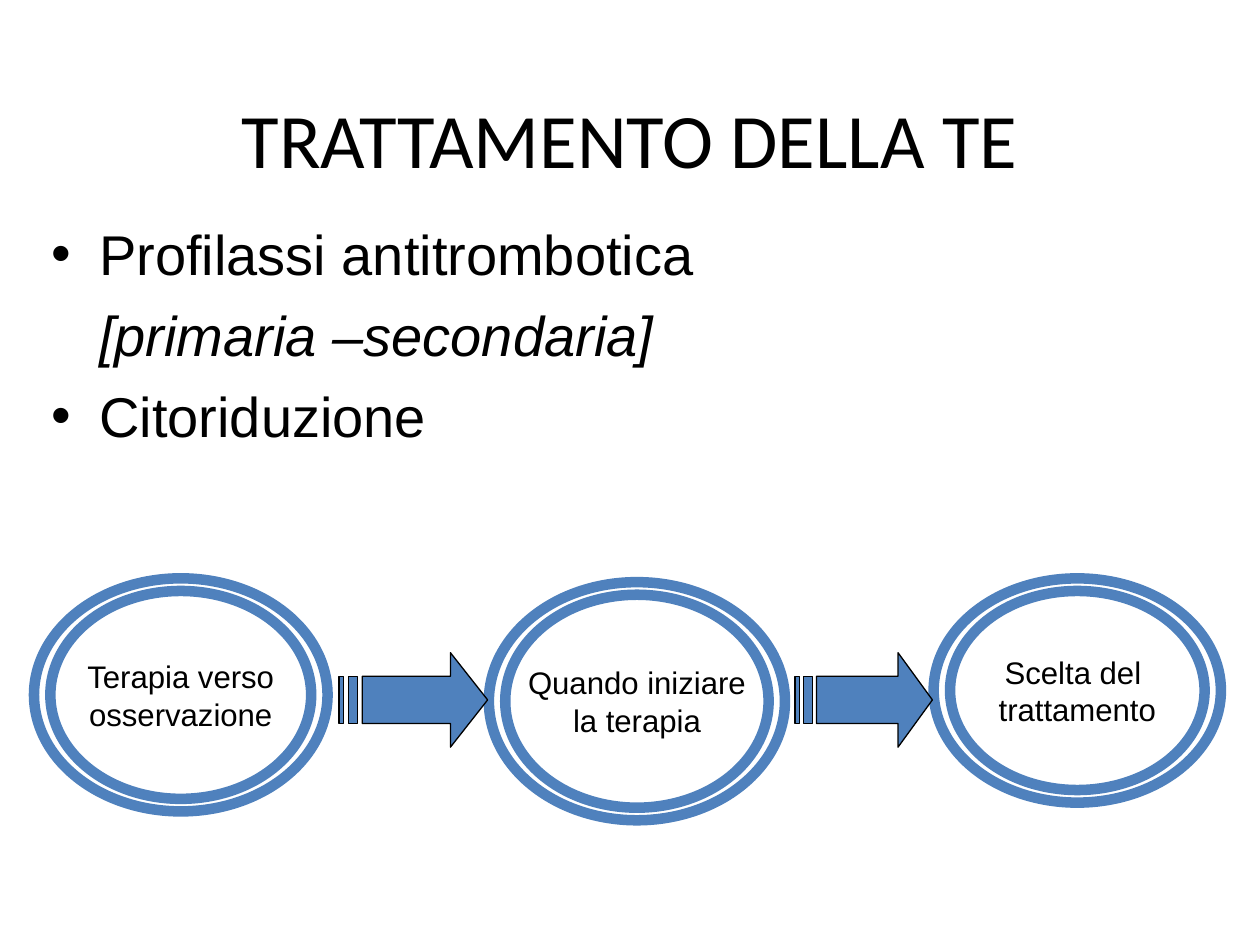
from lxml import etree
from pptx import Presentation
from pptx.dml.color import RGBColor
from pptx.enum.shapes import MSO_SHAPE
from pptx.enum.text import MSO_ANCHOR, MSO_AUTO_SIZE, PP_ALIGN
from pptx.oxml.ns import qn
from pptx.util import Inches, Pt

OVAL = MSO_SHAPE.OVAL
MIDDLE = MSO_ANCHOR.MIDDLE
NO_FIT = MSO_AUTO_SIZE.NONE
CENTER = PP_ALIGN.CENTER

BLUE, BLACK, WHITE = "4F81BD", "000000", "FFFFFF"
TITLE = "TRATTAMENTO DELLA TE"
BODY = [
    ("Profilassi antitrombotica", True),
    ("[primaria –secondaria]", False),
    ("Citoriduzione", True),
]
STEPS = [
    ("Terapia verso\nosservazione", 0.27, 4.59, 2.33, 1.85),
    ("Quando iniziare\nla terapia", 3.88, 4.62, 2.35, 1.89),
    ("Scelta del \ntrattamento", 7.41, 4.59, 2.28, 1.78),
]
ARROWS = [(2.69, 5.18, 1.18, 0.75), (6.31, 5.18, 1.09, 0.75)]
RING_X, RING_Y = 0.13, 0.1
INDENT = 0.38
ARROW_PARTS = [
    [(24, 0), (24, 8), (5, 8), (5, 24), (24, 24), (24, 32), (32, 16)],
    [(2, 8), (2, 24), (4, 24), (4, 8)],
    [(0, 8), (0, 24), (1, 24), (1, 8)],
]


def rgb(value):
    """Return a colour from a hex string."""
    return RGBColor.from_string(value)


def style_text(p, size, font="Arial", italic=False):
    """Format every run of a paragraph."""
    for r in p.runs:
        r.font.size = Pt(size)
        r.font.name = font
        r.font.italic = italic
        r.font.color.rgb = rgb(BLACK)


def style_shape(sp, fill, line, width):
    """Give a shape a plain fill and outline without shadow."""
    sp.shadow.inherit = False
    sp.fill.solid()
    sp.fill.fore_color.rgb = rgb(fill)
    sp.line.color.rgb = rgb(line)
    sp.line.width = Pt(width)


def add_title(s):
    """Place and format the title."""
    sp = s.shapes.title
    sp.left, sp.top, sp.width, sp.height = map(Inches, (1.22, 0.67, 7.56, 0.84))
    tf = sp.text_frame
    tf.text = TITLE
    tf.auto_size = NO_FIT
    tf.vertical_anchor = MIDDLE
    tf.paragraphs[0].alignment = CENTER
    style_text(tf.paragraphs[0], 44, "Calibri")


def add_body(s):
    """Add the bulleted list with its indented second line."""
    tf = s.shapes.add_textbox(*map(Inches, (0.31, 1.69, 9.57, 4.65))).text_frame
    tf.word_wrap = True
    tf.text = "\n".join(text for text, _ in BODY)
    for i, (p, (_, bulleted)) in enumerate(zip(tf.paragraphs, BODY)):
        if i:
            p.space_before = Pt(8)
        pPr = p._p.get_or_add_pPr()
        pPr.set("marL", str(Inches(INDENT)))
        if bulleted:
            pPr.set("indent", str(-Inches(INDENT)))
            etree.SubElement(pPr, qn("a:buFont"), typeface="Arial")
            etree.SubElement(pPr, qn("a:buChar"), char="•")
        style_text(p, 32, italic=not bulleted)


def add_step(s, text, x, y, w, h):
    """Add a double-ringed oval with centred text."""
    for dx, dy in ((0, 0), (RING_X, RING_Y)):
        box = (x + dx, y + dy, w - 2 * dx, h - 2 * dy)
        sp = s.shapes.add_shape(OVAL, *map(Inches, box))
        style_shape(sp, WHITE, BLUE, 6)
    tf = sp.text_frame
    tf.text = text
    tf.word_wrap = False
    tf.vertical_anchor = MIDDLE
    for p in tf.paragraphs:
        p.alignment = CENTER
        style_text(p, 17.8)


def add_arrow(s, x, y, w, h):
    """Add a striped arrow drawn on a grid of 32 by 32 units."""
    parts = [[(Inches(x + w * u / 32), Inches(y + h * v / 32)) for u, v in part]
             for part in ARROW_PARTS]
    fb = s.shapes.build_freeform(*parts[0][0])
    fb.add_line_segments(parts[0][1:])
    for part in parts[1:]:
        fb.move_to(*part[0])
        fb.add_line_segments(part[1:])
    style_shape(fb.convert_to_shape(), BLUE, BLACK, 0.75)


def main():
    """Build the slide and save it."""
    prs = Presentation()
    prs.slide_width, prs.slide_height = Inches(10), Inches(7.5)
    s = prs.slides.add_slide(prs.slide_layouts[5])
    add_title(s)
    add_body(s)
    for step in STEPS:
        add_step(s, *step)
    for arrow in ARROWS:
        add_arrow(s, *arrow)
    prs.save("out.pptx")


if __name__ == "__main__":
    main()
